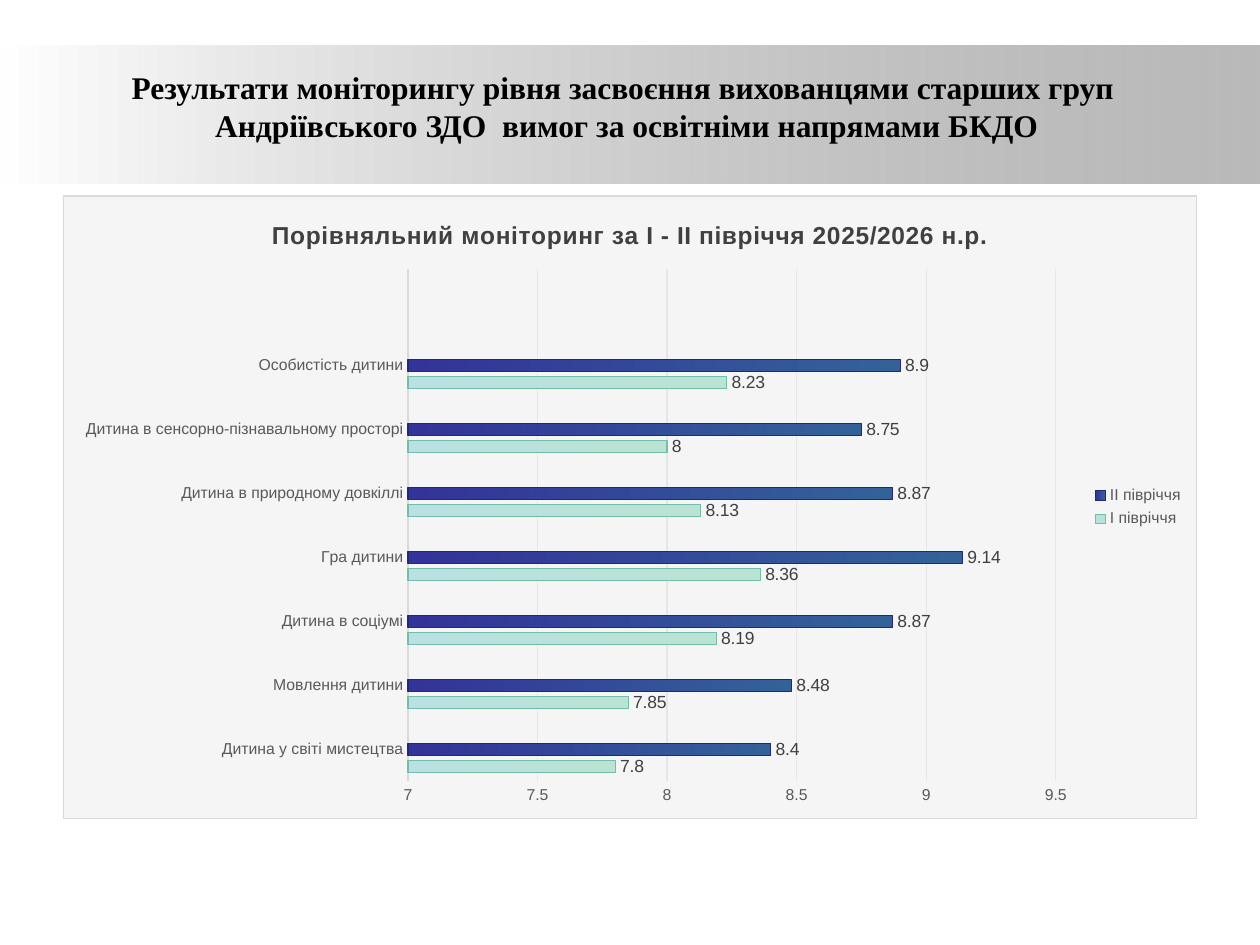
from dataclasses import dataclass
from typing import Optional

from pptx import Presentation
from pptx.chart.data import CategoryChartData
from pptx.dml.color import RGBColor
from pptx.enum.chart import XL_CHART_TYPE, XL_LABEL_POSITION, XL_LEGEND_POSITION, XL_TICK_MARK
from pptx.enum.shapes import MSO_SHAPE
from pptx.enum.text import MSO_ANCHOR, PP_ALIGN
from pptx.oxml import parse_xml
from pptx.oxml.ns import nsdecls, qn
from pptx.util import Inches, Pt

BAR_CLUSTERED = XL_CHART_TYPE.BAR_CLUSTERED
OUTSIDE_END = XL_LABEL_POSITION.OUTSIDE_END
LEGEND_RIGHT = XL_LEGEND_POSITION.RIGHT
NO_TICK = XL_TICK_MARK.NONE
RECTANGLE = MSO_SHAPE.RECTANGLE
MIDDLE = MSO_ANCHOR.MIDDLE
CENTER = PP_ALIGN.CENTER

WHITE = RGBColor(0xFF, 0xFF, 0xFF)
BLACK = RGBColor(0x00, 0x00, 0x00)
BAND_GRAY = RGBColor(0x80, 0x80, 0x80)
DARK_TEXT = RGBColor(0x40, 0x40, 0x40)
AXIS_TEXT = RGBColor(0x59, 0x59, 0x59)
AXIS_LINE = RGBColor(0xD9, 0xD9, 0xD9)
GRID_LINE = RGBColor(0xE6, 0xE6, 0xE6)

SLIDE_WIDTH, SLIDE_HEIGHT = Inches(10), Inches(7.5)
HAIRLINE = Pt(0.75)
AXIS_FONT = {"name": "Arial", "size": Pt(9), "bold": False}
LABEL_FONT = {"name": "Arial", "size": Pt(10), "bold": False}
CHART_TITLE_FONT = {"name": "Arial", "size": Pt(14), "bold": True}
HEADING_FONT = {"name": "Times New Roman", "size": Pt(18), "bold": True}

HEADING = ("Результати моніторингу рівня засвоєння вихованцями старших груп \v"
           "Андріївського ЗДО  вимог за освітніми напрямами БКДО")
CHART_TITLE = "Порівняльний моніторинг за І - ІІ півріччя 2025/2026 н.р."
CATEGORIES = [
    "Дитина у світі мистецтва", "Мовлення дитини", "Дитина в соціумі",
    "Гра дитини", "Дитина в природному довкіллі",
    "Дитина в сенсорно-пізнавальному просторі", "Особистість дитини", "",
]


@dataclass(frozen=True)
class Area:
    """Left, top, width and height in inches on the slide."""
    left: float
    top: float
    width: float
    height: float

    def lengths(self) -> tuple:
        return tuple(Inches(v) for v in (self.left, self.top, self.width, self.height))


@dataclass(frozen=True)
class HalfYear:
    name: str
    values: list[Optional[float]]
    start: RGBColor
    end: RGBColor
    outline: RGBColor


BAND = Area(0, 0.36, 10, 1.1)
HEADING_AREA = Area(0.5, 0.13, 8.95, 1.42)
CHART_AREA = Area(0.5, 1.55, 9, 4.95)
PLOT_SHARES = {"x": 0.304, "y": 0.118, "w": 0.572, "h": 0.823}

# The empty third series keeps a free bar slot in every category
SERIES = [
    HalfYear("І півріччя", [7.8, 7.85, 8.19, 8.36, 8.13, 8, 8.23, None],
             RGBColor(0xBB, 0xE0, 0xE3), RGBColor(0xBB, 0xE3, 0xD3), RGBColor(0x72, 0xBF, 0xA5)),
    HalfYear("ІІ півріччя", [8.4, 8.48, 8.87, 9.14, 8.87, 8.75, 8.9, None],
             RGBColor(0x33, 0x33, 0x99), RGBColor(0x33, 0x62, 0x99), RGBColor(0x26, 0x26, 0x73)),
    HalfYear("Ряди 3", [None] * len(CATEGORIES),
             WHITE, WHITE, RGBColor(0xBF, 0xBF, 0xBF)),
]


def set_font(font, values: dict, color: RGBColor) -> None:
    for name, value in values.items():
        setattr(font, name, value)
    font.color.rgb = color


def set_line(line, color: RGBColor) -> None:
    line.color.rgb = color
    line.width = HAIRLINE


def set_gradient(fill, start: RGBColor, end: RGBColor) -> None:
    fill.gradient()
    fill.gradient_angle = 0
    for stop, color, position in zip(fill.gradient_stops, (start, end), (0, 1)):
        stop.color.rgb = color
        stop.position = position


def add_band(slide) -> None:
    band = slide.shapes.add_shape(RECTANGLE, *BAND.lengths())
    band.shadow.inherit = False
    band.line.fill.background()
    set_gradient(band.fill, WHITE, BAND_GRAY)
    gray = list(band._element.spPr.iter(qn("a:srgbClr")))[-1]
    gray.append(parse_xml(f'<a:alpha {nsdecls("a")} val="54000"/>'))


def add_heading(slide) -> None:
    frame = slide.shapes.add_textbox(*HEADING_AREA.lengths()).text_frame
    frame.word_wrap = True
    frame.vertical_anchor = MIDDLE
    paragraph = frame.paragraphs[0]
    paragraph.text = HEADING
    paragraph.alignment = CENTER
    for run in paragraph.runs:
        set_font(run.font, HEADING_FONT, BLACK)


def format_axes(chart) -> None:
    for axis in (chart.category_axis, chart.value_axis):
        axis.major_tick_mark = axis.minor_tick_mark = NO_TICK
        set_font(axis.tick_labels.font, AXIS_FONT, AXIS_TEXT)
    set_line(chart.category_axis.format.line, AXIS_LINE)
    value_axis = chart.value_axis
    limits = {"minimum_scale": 7, "maximum_scale": 9.5, "major_unit": 0.5}
    for name, value in limits.items():
        setattr(value_axis, name, value)
    value_axis.format.line.fill.background()
    set_line(value_axis.major_gridlines.format.line, GRID_LINE)


def format_series(plot) -> None:
    plot.gap_width, plot.overlap, plot.vary_by_categories = 140, -40, False
    for series, half_year in zip(plot.series, SERIES):
        set_gradient(series.format.fill, half_year.start, half_year.end)
        set_line(series.format.line, half_year.outline)
        labels = series.data_labels
        labels.show_value = True
        labels.position = OUTSIDE_END
        set_font(labels.font, LABEL_FONT, DARK_TEXT)


def format_legend(chart) -> None:
    chart.has_legend = True
    legend = chart.legend
    legend.position = LEGEND_RIGHT
    legend.include_in_layout = False
    set_font(legend.font, AXIS_FONT, AXIS_TEXT)
    # Horizontal bars list the legend in reverse: entry 0 is the empty series
    legend._element.find(qn("c:legendPos")).addnext(parse_xml(
        f'<c:legendEntry {nsdecls("c")}><c:idx val="0"/><c:delete val="1"/></c:legendEntry>'))


def format_chart_area(chart) -> None:
    chart_space = chart._chartSpace
    chart_space.find(qn("c:chart")).addnext(parse_xml(
        f'<c:spPr {nsdecls("c", "a")}><a:solidFill><a:srgbClr val="F5F5F5"/></a:solidFill>'
        f'<a:ln w="{HAIRLINE}"><a:solidFill><a:srgbClr val="{AXIS_LINE}"/></a:solidFill></a:ln>'
        '</c:spPr>'))
    plot_area = next(chart_space.iter(qn("c:plotArea")))
    for layout in plot_area.findall(qn("c:layout")):
        plot_area.remove(layout)
    modes = '<c:xMode val="edge"/><c:yMode val="edge"/>'
    shares = "".join(f'<c:{name} val="{share}"/>' for name, share in PLOT_SHARES.items())
    plot_area.insert(0, parse_xml(
        f'<c:layout {nsdecls("c")}><c:manualLayout><c:layoutTarget val="inner"/>'
        f'{modes}{shares}</c:manualLayout></c:layout>'))


def add_monitoring_chart(slide) -> None:
    data = CategoryChartData()
    data.categories = CATEGORIES
    for half_year in SERIES:
        data.add_series(half_year.name, half_year.values)
    chart = slide.shapes.add_chart(BAR_CLUSTERED, *CHART_AREA.lengths(), data).chart
    set_font(chart.font, LABEL_FONT, BLACK)
    chart.has_title = True
    title = chart.chart_title.text_frame
    title.text = CHART_TITLE
    run = title.paragraphs[0].runs[0]
    set_font(run.font, CHART_TITLE_FONT, DARK_TEXT)
    run.font._element.set("spc", "25")
    format_axes(chart)
    format_series(chart.plots[0])
    format_legend(chart)
    format_chart_area(chart)


def main() -> None:
    presentation = Presentation()
    presentation.slide_width, presentation.slide_height = SLIDE_WIDTH, SLIDE_HEIGHT
    slide = presentation.slides.add_slide(presentation.slide_layouts[6])
    add_band(slide)
    add_monitoring_chart(slide)
    add_heading(slide)
    presentation.save("out.pptx")


if __name__ == "__main__":
    main()
